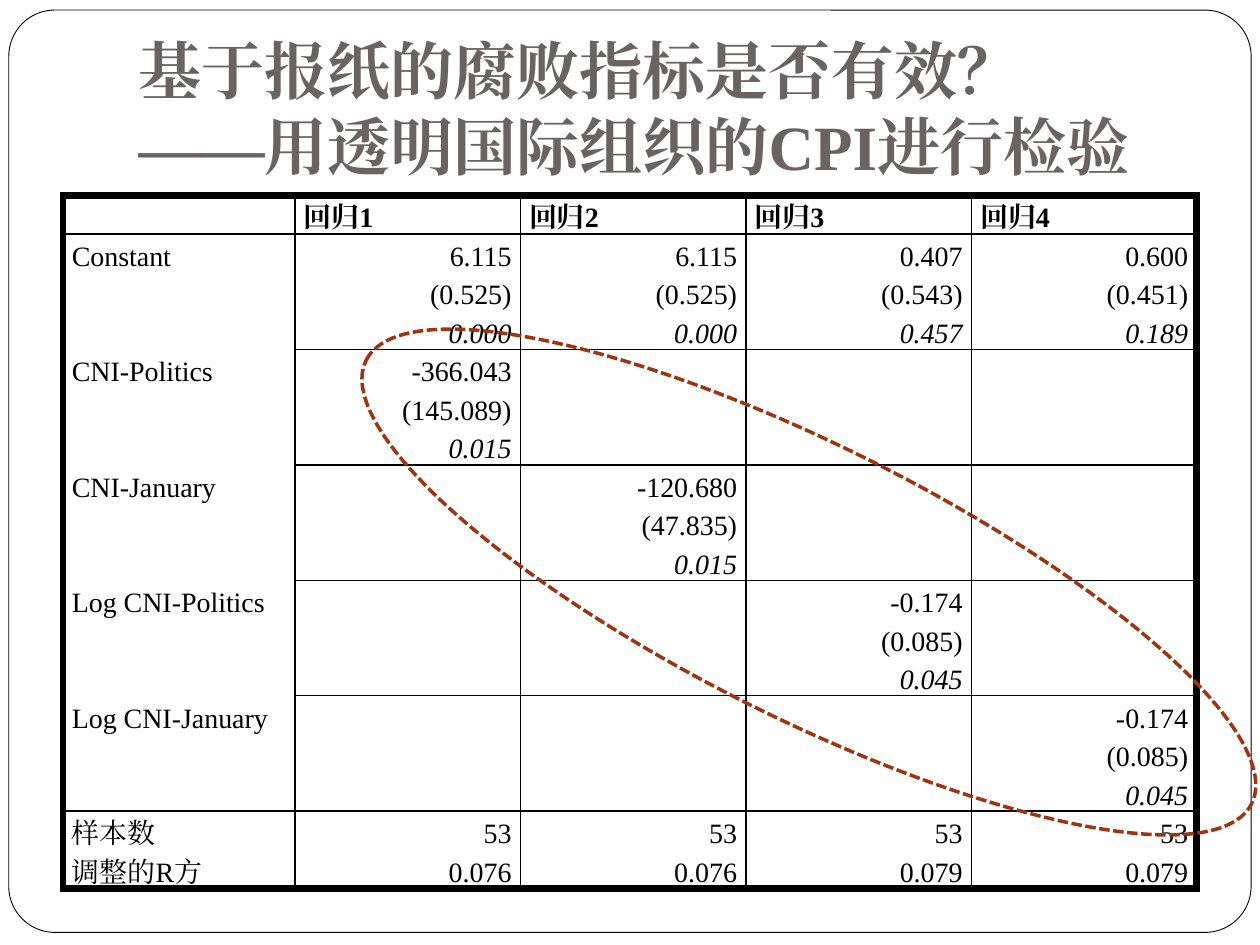
from pptx import Presentation
from pptx.dml.color import RGBColor
from pptx.enum.dml import MSO_LINE
from pptx.enum.shapes import MSO_SHAPE
from pptx.enum.text import MSO_ANCHOR, MSO_AUTO_SIZE, PP_ALIGN
from pptx.oxml.ns import qn
from pptx.util import Inches, Pt
from lxml.etree import SubElement

TITLE = "基于报纸的腐败指标是否有效？\v——用透明国际组织的CPI进行检验"
HEADS = ["", "回归1", "回归2", "回归3", "回归4"]
BLANK = ("", "", "")
GROUPS = [
    ("Constant", [("6.115", "(0.525)", "0.000"), ("6.115", "(0.525)", "0.000"),
                  ("0.407", "(0.543)", "0.457"), ("0.600", "(0.451)", "0.189")]),
    ("CNI-Politics", [("-366.043", "(145.089)", "0.015"), BLANK, BLANK, BLANK]),
    ("CNI-January", [BLANK, ("-120.680", "(47.835)", "0.015"), BLANK, BLANK]),
    ("Log CNI-Politics", [BLANK, BLANK, ("-0.174", "(0.085)", "0.045"), BLANK]),
    ("Log CNI-January", [BLANK, BLANK, BLANK, ("-0.174", "(0.085)", "0.045")]),
]
TOTALS = [
    ["样本数", "53", "53", "53", "53"],
    ["调整的R方", "0.076", "0.076", "0.079", "0.079"],
]
THEME = {
    "font": "Times New Roman", "title": 36, "body": 16,
    "ink": "000000", "head": "696464", "paper": "FFFFFF", "mark": "9C3511",
    "thick": 4.5, "mid": 1.5, "thin": 1,
}
BOX = (0.5, 1.55, 9, 5.5)
WIDTHS = [1.84] + [1.79] * 4


def color(name):
    return RGBColor.from_string(THEME[name])


def write(frame, text, size="body", ink="ink", bold=False, italic=False,
          align=PP_ALIGN.LEFT):
    frame.text = text
    para = frame.paragraphs[0]
    para.alignment = align
    for run in para.runs:
        font = run.font
        font.name, font.size = THEME["font"], Pt(THEME[size])
        font.bold, font.italic = bold, italic
        font.color.rgb = color(ink)
        SubElement(run._r.get_or_add_rPr(), qn("a:ea"), typeface=THEME["font"])


def border(cell, **sides):
    props = cell._tc.get_or_add_tcPr()
    for spot, side in enumerate(("L", "R", "T", "B")):
        width = sides[side]
        line = props.makeelement(qn("a:ln" + side), {"w": str(Pt(width))})
        props.insert(spot, line)
        if width:
            fill = SubElement(line, qn("a:solidFill"))
            SubElement(fill, qn("a:srgbClr"), val=THEME["ink"])
        else:
            SubElement(line, qn("a:noFill"))


def draw(slide, kind, box):
    shape = slide.shapes.add_shape(kind, *map(Inches, box))
    shape.shadow.inherit = False
    shape.line.color.rgb = color("ink")
    return shape


def rows():
    grid = [HEADS]
    for label, stats in GROUPS:
        for step, line in enumerate(zip(*stats)):
            grid.append(["" if step else label, *line])
    return grid + TOTALS


def rules(grid):
    thick, mid, thin = THEME["thick"], THEME["mid"], THEME["thin"]
    last = len(grid) - 1
    ends = range(3, last - 2, 3)
    across = {0: thick, 1: mid, last - 1: mid, last + 1: thick}
    across.update({end + 1: thin for end in ends if end + 1 not in across})
    down = [thick, mid, thin, thin, thin, thick]
    return across, down


def fill_table(slide):
    grid = rows()
    across, down = rules(grid)
    table = slide.shapes.add_table(len(grid), len(HEADS), *map(Inches, BOX)).table
    table.first_row = table.horz_banding = False
    for col, width in zip(table.columns, WIDTHS):
        col.width = Inches(width)
    for r, line in enumerate(grid):
        table.rows[r].height = Inches(BOX[3] / len(grid))
        for c, text in enumerate(line):
            cell = table.cell(r, c)
            cell.margin_left = cell.margin_right = Inches(0.07)
            cell.margin_top = cell.margin_bottom = 0
            cell.vertical_anchor = MSO_ANCHOR.BOTTOM
            cell.fill.background()
            stat = 0 < r < len(grid) - len(TOTALS)
            write(cell.text_frame, text, bold=r == 0,
                  italic=stat and c > 0 and r % 3 == 0,
                  align=PP_ALIGN.RIGHT if r and c else PP_ALIGN.LEFT)
            top, low = across.get(r, 0), across.get(r + 1, 0)
            if c == 0:
                top, low = (0 if w == THEME["thin"] else w for w in (top, low))
            border(cell, L=down[c], R=down[c + 1], T=top, B=low)


def main():
    deck = Presentation()
    deck.slide_width, deck.slide_height = Inches(10), Inches(7.5)
    slide = deck.slides.add_slide(deck.slide_layouts[5])

    card = draw(slide, MSO_SHAPE.ROUNDED_RECTANGLE, (0.07, 0.08, 9.86, 7.32))
    card.adjustments[0] = 0.05
    card.fill.solid()
    card.fill.fore_color.rgb = color("paper")
    card.line.width = Pt(0.5)

    title = slide.shapes.title
    card._element.addnext(title._element)
    title.left, title.top = Inches(1), Inches(0.3)
    title.width, title.height = Inches(8.5), Inches(1.25)
    frame = title.text_frame
    frame.auto_size = MSO_AUTO_SIZE.NONE
    frame.vertical_anchor = MSO_ANCHOR.BOTTOM
    frame.margin_bottom = Inches(0.1)
    write(frame, TITLE, size="title", ink="head", bold=True)

    fill_table(slide)

    ring = draw(slide, MSO_SHAPE.OVAL, (2.49, 3.54, 7.86, 2.16))
    ring.rotation = 26.6
    ring.fill.background()
    ring.line.color.rgb = color("mark")
    ring.line.width = Pt(2)
    ring.line.dash_style = MSO_LINE.SQUARE_DOT
    deck.save("out.pptx")


if __name__ == "__main__":
    main()
